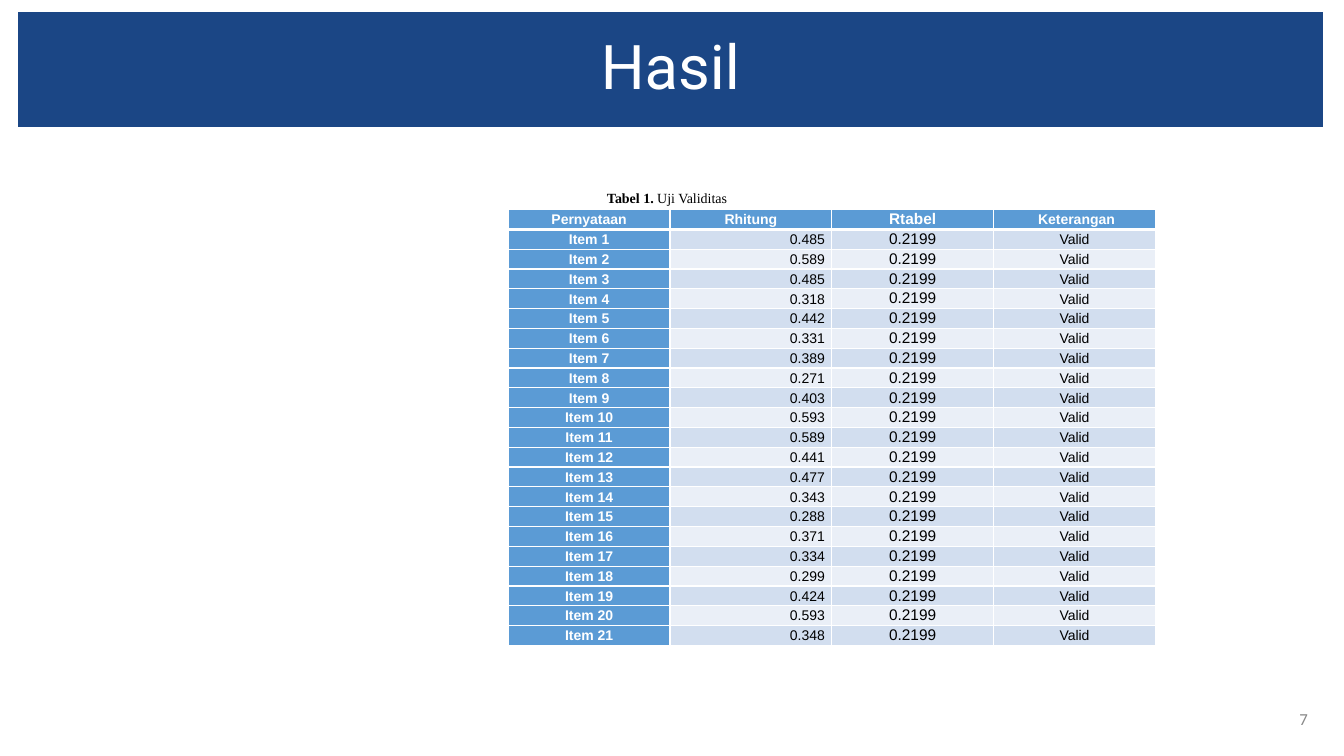
"""Build the "Hasil" slide with the validity test table."""
from lxml import etree
from pptx import Presentation
from pptx.dml.color import RGBColor
from pptx.enum.shapes import MSO_SHAPE
from pptx.enum.text import MSO_ANCHOR, PP_ALIGN
from pptx.oxml.ns import qn
from pptx.util import Inches, Pt

RECTANGLE = MSO_SHAPE.RECTANGLE
TOP, MIDDLE = MSO_ANCHOR.TOP, MSO_ANCHOR.MIDDLE
LEFT, CENTER, RIGHT = PP_ALIGN.LEFT, PP_ALIGN.CENTER, PP_ALIGN.RIGHT

WHITE = RGBColor(0xFF, 0xFF, 0xFF)
BLACK = RGBColor(0x00, 0x00, 0x00)
GREY = RGBColor(0x88, 0x88, 0x88)
NAVY = RGBColor(0x1B, 0x46, 0x85)
BLUE = RGBColor(0x5B, 0x9B, 0xD5)
BANDS = (RGBColor(0xD2, 0xDE, 0xEF), RGBColor(0xEA, 0xEF, 0xF7))

TITLE = "Hasil"
PAGE = "7"
CAPTION = (("Tabel 1. ", True), ("Uji Validitas", False))
HEADER = ("Pernyataan", "Rhitung", "Rtabel", " Keterangan")
R_HITUNG = (
    "0.485", "0.589", "0.485", "0.318", "0.442", "0.331", "0.389",
    "0.271", "0.403", "0.593", "0.589", "0.441", "0.477", "0.343",
    "0.288", "0.371", "0.334", "0.299", "0.424", "0.593", "0.348",
)
R_TABEL = "0.2199"
STATUS = "Valid"

COLUMN_SIZES = (10, 10, 11, 10)
COLUMN_ANCHORS = (MIDDLE, MIDDLE, TOP, MIDDLE)
BODY_ALIGNS = (CENTER, RIGHT, CENTER, CENTER)
TABLE_LEFT, TABLE_TOP, TABLE_WIDTH = 5.04, 2.08, 6.42
ROW_HEIGHT = 0.18


def style(paragraph, font_name, size, color, align):
    """Set the font and alignment of a paragraph."""
    paragraph.alignment = align
    font = paragraph.font
    font.name, font.size = font_name, Pt(size)
    font.color.rgb = color


def add_text(slide, left, top, width, height):
    """Add a wrapping, vertically centred text box and return its frame."""
    frame = slide.shapes.add_textbox(
        Inches(left), Inches(top), Inches(width), Inches(height)).text_frame
    frame.word_wrap = True
    frame.vertical_anchor = MIDDLE
    return frame


def set_borders(cell, bottom_width, top_width):
    """Give a cell white borders."""
    properties = cell._tc.get_or_add_tcPr()
    widths = (("L", 1), ("R", 1), ("T", top_width), ("B", bottom_width))
    for position, (side, width) in enumerate(widths):
        line = etree.Element(qn(f"a:ln{side}"), w=str(Pt(width)))
        fill = etree.SubElement(line, qn("a:solidFill"))
        etree.SubElement(fill, qn("a:srgbClr"), val=str(WHITE))
        properties.insert(position, line)


def add_title(slide):
    """Add the title band."""
    band = slide.shapes.add_shape(
        RECTANGLE, Inches(0.18), Inches(0.12), Inches(12.94), Inches(1.14))
    band.shadow.inherit = False
    band.fill.solid()
    band.fill.fore_color.rgb = NAVY
    band.line.fill.background()
    band.text_frame.vertical_anchor = MIDDLE
    paragraph = band.text_frame.paragraphs[0]
    paragraph.text = TITLE
    paragraph.line_spacing = 0.9
    style(paragraph, "Roboto", 44, WHITE, CENTER)


def add_caption(slide):
    """Add the caption above the table."""
    frame = add_text(slide, TABLE_LEFT, 1.82, TABLE_WIDTH, 0.29)
    frame.margin_left = Inches(0.98)
    paragraph = frame.paragraphs[0]
    for words, bold in CAPTION:
        run = paragraph.add_run()
        run.text = words
        run.font.bold = bold
    style(paragraph, "Times New Roman", 10, BLACK, LEFT)


def add_validity_table(slide):
    """Add the table of items and their validity."""
    rows = [HEADER] + [(f"Item {number}", value, R_TABEL, STATUS)
                       for number, value in enumerate(R_HITUNG, 1)]
    table = slide.shapes.add_table(
        len(rows), len(HEADER), Inches(TABLE_LEFT), Inches(TABLE_TOP),
        Inches(TABLE_WIDTH), Inches(ROW_HEIGHT * len(rows))).table
    for row_index, row in enumerate(rows):
        table.rows[row_index].height = Inches(ROW_HEIGHT)
        for column, words in enumerate(row):
            is_header = row_index == 0
            is_heading = is_header or column == 0
            cell = table.cell(row_index, column)
            cell.margin_left = cell.margin_right = Inches(0.07)
            cell.margin_top = cell.margin_bottom = 0
            cell.vertical_anchor = COLUMN_ANCHORS[column]
            cell.fill.solid()
            cell.fill.fore_color.rgb = BLUE if is_heading else BANDS[(row_index - 1) % 2]
            set_borders(cell, 3 if is_header else 1, 3 if row_index == 1 else 1)
            paragraph = cell.text_frame.paragraphs[0]
            paragraph.text = words
            paragraph.line_spacing = 1.07
            style(paragraph, "Arial", COLUMN_SIZES[column],
                  WHITE if is_heading else BLACK,
                  CENTER if is_header else BODY_ALIGNS[column])
            paragraph.font.bold = is_heading


def add_page_number(slide):
    """Add the page number."""
    paragraph = add_text(slide, 12.5, 6.93, 0.57, 0.4).paragraphs[0]
    paragraph.text = PAGE
    style(paragraph, "Calibri", 12, GREY, RIGHT)


def main():
    """Build and save the slide."""
    presentation = Presentation()
    presentation.slide_width = Inches(13.33)
    presentation.slide_height = Inches(7.5)
    slide = presentation.slides.add_slide(presentation.slide_layouts[6])
    add_page_number(slide)
    add_title(slide)
    add_validity_table(slide)
    add_caption(slide)
    presentation.save("out.pptx")


if __name__ == "__main__":
    main()
